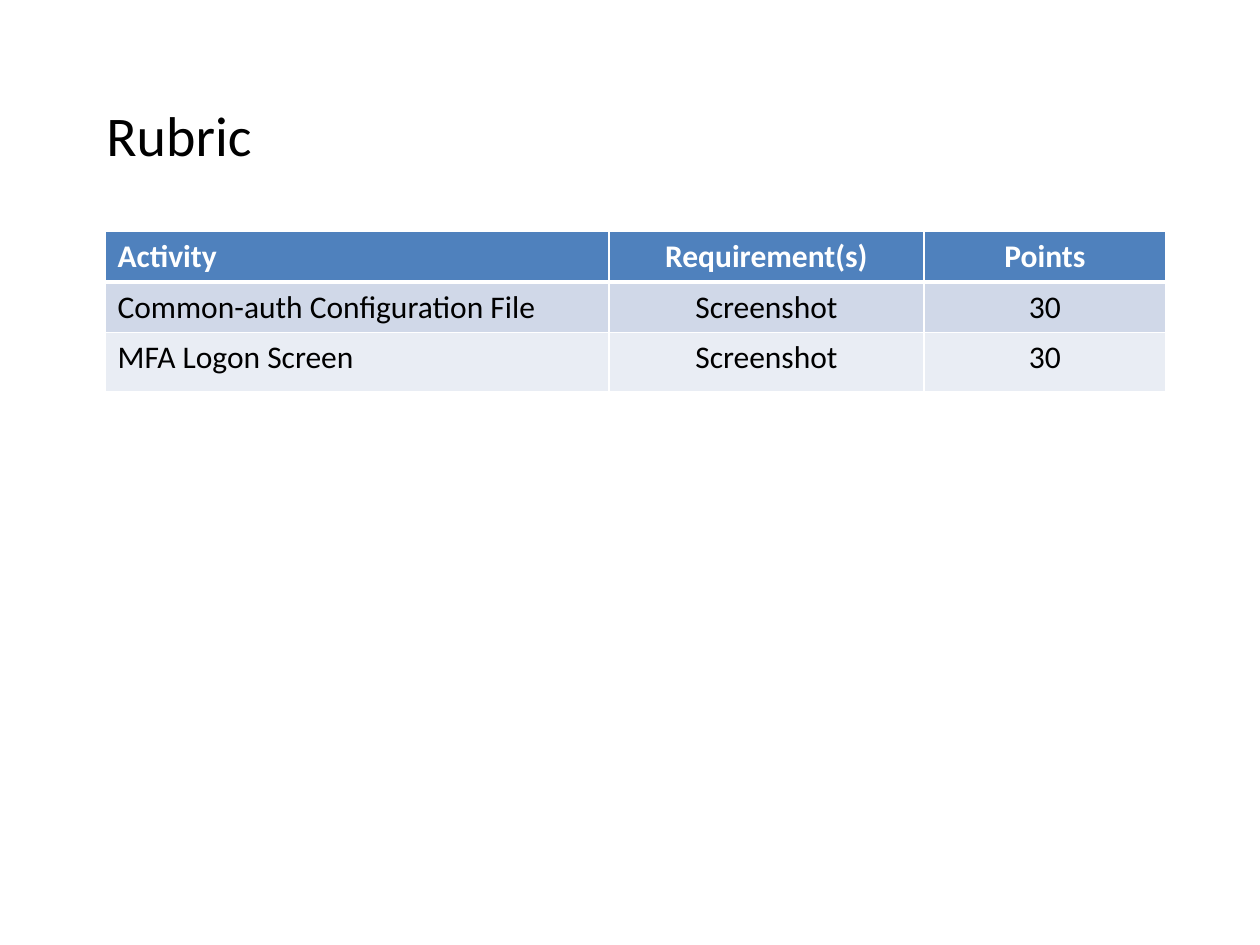
from lxml.etree import SubElement
from pptx import Presentation
from pptx.dml.color import RGBColor
from pptx.enum.text import MSO_ANCHOR, PP_ALIGN
from pptx.oxml.ns import qn
from pptx.util import Emu, Inches, Pt

SCALE = Inches(1) // 126
WHITE = RGBColor(0xFF, 0xFF, 0xFF)
BLACK = RGBColor(0x00, 0x00, 0x00)
HEADER_BLUE = RGBColor(0x4F, 0x81, 0xBD)
BAND_BLUE = RGBColor(0xD0, 0xD8, 0xE8)
PALE_BLUE = RGBColor(0xE9, 0xED, 0xF4)

ROWS = [
    ("Activity", "Requirement(s)", "Points"),
    ("Common-auth Configuration File", "Screenshot", "30"),
    ("MFA Logon Screen", "Screenshot", "30"),
]
ROW_FILLS = [HEADER_BLUE, BAND_BLUE, PALE_BLUE]
COLUMN_WIDTHS = [504, 315, 242]
ROW_HEIGHTS = [51, 50, 59]


def px(length):
    """Turn pixels into EMU."""
    return Emu(length * SCALE)


def write_text(frame, text, size=18, color=BLACK, bold=False, align=PP_ALIGN.LEFT):
    """Write one formatted paragraph and return it."""
    para = frame.paragraphs[0]
    para.alignment = align
    span = para.add_run()
    span.text = text
    span.font.name = "Calibri"
    span.font.size = Pt(size)
    span.font.bold = bold
    span.font.color.rgb = color
    return para


def add_title(page, text):
    """Add the heading box with proportional space above its text."""
    box = page.shapes.add_textbox(px(94), px(94), px(1134), px(624))
    box.text_frame.word_wrap = True
    box.text_frame.vertical_anchor = MSO_ANCHOR.TOP
    para = write_text(box.text_frame, text, size=32)
    spacing = SubElement(para._p.get_or_add_pPr(), qn("a:spcBef"))
    SubElement(spacing, qn("a:spcPct"), val="20000")


def set_borders(cell, top, bottom):
    """Draw white cell borders with the given top and bottom widths in points."""
    properties = cell._tc.get_or_add_tcPr()
    for side, width in (("L", 1), ("R", 1), ("T", top), ("B", bottom)):
        line = SubElement(properties, qn(f"a:ln{side}"), w=str(Pt(width)))
        fill = SubElement(line, qn("a:solidFill"))
        SubElement(fill, qn("a:srgbClr"), val=str(WHITE))


def add_rubric_table(page):
    """Add the rubric table with a header row and banded body rows."""
    frame = page.shapes.add_table(
        len(ROWS), len(COLUMN_WIDTHS), px(105), px(231),
        px(sum(COLUMN_WIDTHS)), px(sum(ROW_HEIGHTS)))
    table = frame.table
    for column, width in zip(table.columns, COLUMN_WIDTHS):
        column.width = px(width)
    for row, height in zip(table.rows, ROW_HEIGHTS):
        row.height = px(height)
    for row_index, texts in enumerate(ROWS):
        header = row_index == 0
        for column_index, text in enumerate(texts):
            cell = table.cell(row_index, column_index)
            set_borders(cell, top=3 if row_index == 1 else 1, bottom=3 if header else 1)
            cell.fill.solid()
            cell.fill.fore_color.rgb = ROW_FILLS[row_index]
            write_text(cell.text_frame, text, bold=header,
                       color=WHITE if header else BLACK,
                       align=PP_ALIGN.CENTER if column_index else PP_ALIGN.LEFT)


def main():
    """Build and save the rubric slide."""
    deck = Presentation()
    deck.slide_width, deck.slide_height = px(1260), px(945)
    page = deck.slides.add_slide(deck.slide_layouts[6])
    add_title(page, "Rubric")
    add_rubric_table(page)
    deck.save("out.pptx")


if __name__ == "__main__":
    main()
